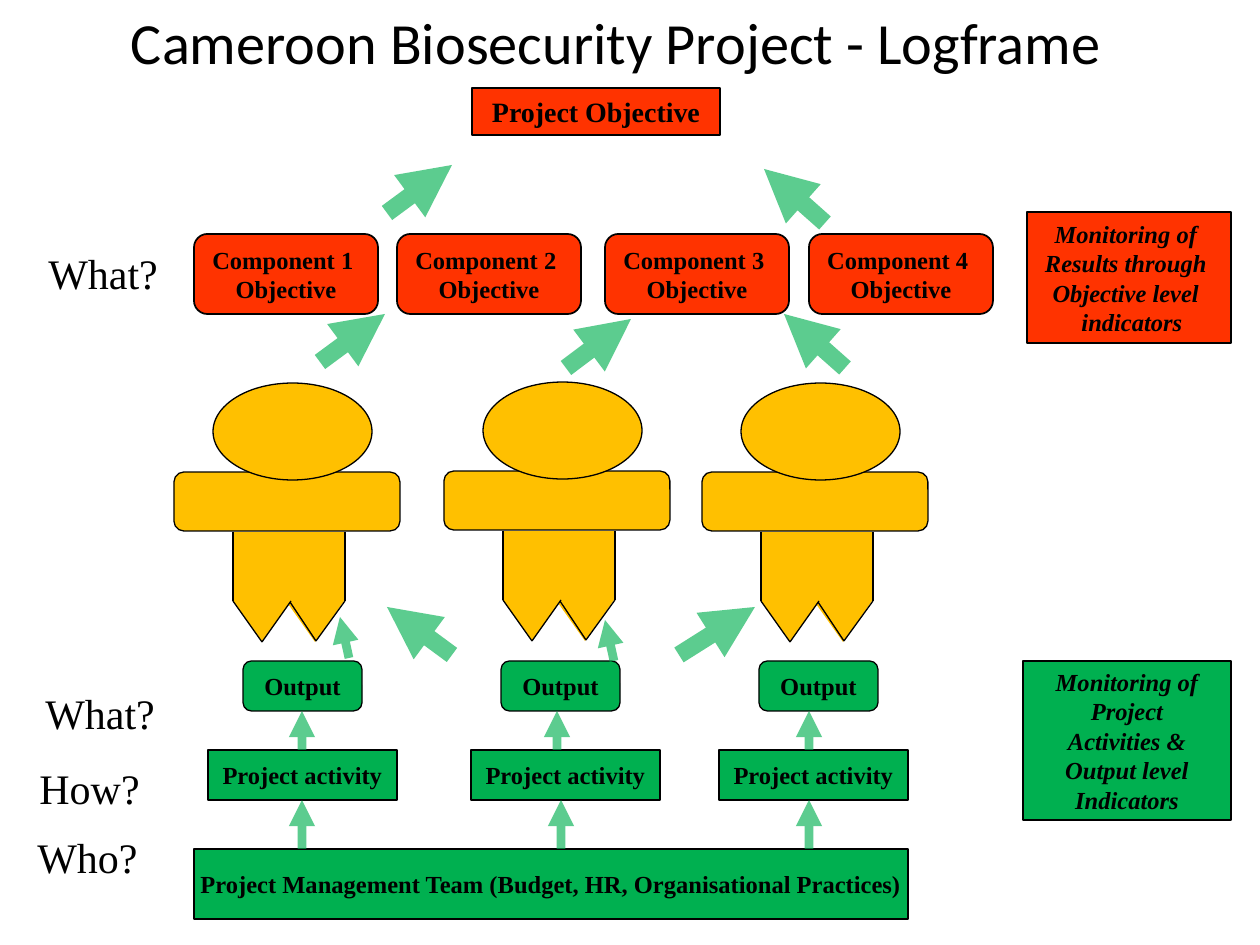
import pptx
import pptx.util
import pptx.dml.color
import pptx.enum.shapes
import pptx.enum.text
import pptx.oxml.ns
import lxml.etree

RGB = pptx.dml.color.RGBColor
SHAPE = pptx.enum.shapes.MSO_SHAPE
ALIGN = pptx.enum.text.PP_ALIGN
ANCHOR = pptx.enum.text.MSO_ANCHOR

RED = RGB(0xFF, 0x33, 0x00)
GREEN = RGB(0x00, 0xB0, 0x50)
AMBER = RGB(0xFF, 0xC0, 0x00)
BLACK = RGB(0, 0, 0)
SERIF = "Times New Roman"

# Content; all lengths in px
TITLE = "Cameroon Biosecurity Project - Logframe"
COMPONENTS = [(194, 1), (397, 2), (605, 3), (809, 4)]
OUTPUT_LEFTS = [243, 501, 759]
ACTIVITY_LEFTS = [208, 471, 719]
QUESTIONS = [("What?", 36, 241), ("What?", 33, 681),
             ("How?", 27, 756), ("Who?", 25, 825)]
RESULTS_MONITORING = ["Monitoring of ", "Results through ",
                      "Objective level ", " indicators"]
ACTIVITY_MONITORING = ["Monitoring of", "Project", "Activities &",
                       "Output level", "Indicators"]
TEAM = "Project Management Team (Budget, HR, Organisational Practices)"

# Arrows: start x, start y, end x, end y
WIDE_ARROWS = [
    (825, 223, 764, 169), (387, 213, 452, 165),   # components to objective
    (320, 362, 385, 314), (566, 368, 631, 319), (845, 368, 784, 314),
    (452, 655, 387, 607), (679, 655, 755, 607),   # outputs to people
]
NARROW_ARROWS = (
    [(x, 750, x, 711) for x in (302, 557, 809)]
    + [(x, 849, x, 800) for x in (302, 561, 809)]
    + [(614, 661, 605, 620), (349, 658, 340, 617)])

# One person, relative to its top left corner
PEOPLE = [(174, 383), (444, 382), (702, 383)]
TORSO, ARMS, HEAD = (59, 149, 112, 69), (0, 89, 226, 59), (39, 0, 159, 97)
LEGS = [(112, 218, 58, 41), (59, 218, 58, 41)]
BODY_EDGES = [(59, 149, 59, 218), (171, 149, 171, 218),
              (59, 218, 88, 259), (116, 219, 142, 258),
              (88, 259, 117, 218), (142, 258, 171, 218)]


def px(*lengths):
    return [round(n * 914400 / 126) for n in lengths]


def write(shape, lines, align, **font):
    """Put one paragraph per line into a shape or placeholder."""
    frame = shape.text_frame
    frame.text = "\n".join(lines)
    for paragraph in frame.paragraphs:
        paragraph.alignment = align
        paragraph.font.color.rgb = BLACK
        for key, value in font.items():
            setattr(paragraph.font, key, value)
    return frame


def add_block(parent, kind, box, fill, weight=0.75):
    block = parent.add_shape(kind, *px(*box))
    block.shadow.inherit = False
    block.fill.solid()
    block.fill.fore_color.rgb = fill
    if weight:
        block.line.color.rgb = BLACK
        block.line.width = pptx.util.Pt(weight)
    else:
        block.line.fill.background()
    return block


def add_box(kind, box, fill, lines, weight=0.75, size=14, italic=False):
    block = add_block(shapes, kind, box, fill, weight)
    frame = write(block, lines, ALIGN.CENTER, name=SERIF, bold=True,
                  size=pptx.util.Pt(size), italic=italic)
    frame.word_wrap = False
    frame.vertical_anchor = ANCHOR.MIDDLE


def add_line(parent, ends, color, weight):
    line = parent.add_connector(
        pptx.enum.shapes.MSO_CONNECTOR.STRAIGHT, *px(*ends))
    line.line.color.rgb = color
    line.line.width = pptx.util.Pt(weight)
    properties = line._element.spPr
    lxml.etree.SubElement(properties, pptx.oxml.ns.qn("a:effectLst"))
    return line


def add_arrow(ends, weight):
    outline = add_line(shapes, ends, GREEN, weight).line._get_or_add_ln()
    color = outline.find(".//" + pptx.oxml.ns.qn("a:srgbClr"))
    lxml.etree.SubElement(color, pptx.oxml.ns.qn("a:alpha"), val="63000")
    lxml.etree.SubElement(outline, pptx.oxml.ns.qn("a:tailEnd"),
                          type="triangle")


def add_person(left, top):
    def place(box):
        return (left + box[0], top + box[1], *box[2:])

    person = shapes.add_group_shape().shapes
    add_block(person, SHAPE.RECTANGLE, place(TORSO), AMBER, 0)
    add_block(person, SHAPE.ROUNDED_RECTANGLE, place(ARMS), AMBER)
    for leg in LEGS:
        add_block(person, SHAPE.ISOSCELES_TRIANGLE, place(leg),
                  AMBER, 0).rotation = 180
    for x1, y1, x2, y2 in BODY_EDGES:
        add_line(person, (left + x1, top + y1, left + x2, top + y2),
                 BLACK, 0.75)
    add_block(person, SHAPE.OVAL, place(HEAD), AMBER)


deck = pptx.Presentation()
deck.slide_width, deck.slide_height = px(1260, 945)
slide = deck.slides.add_slide(deck.slide_layouts[5])
shapes = slide.shapes

# Title
title = shapes.title
title.left, title.top, title.width, title.height = px(101, -4, 1031, 91)
write(title, [TITLE], ALIGN.CENTER, name="Calibri",
      size=pptx.util.Pt(33.3)).vertical_anchor = ANCHOR.MIDDLE

# Objectives
add_box(SHAPE.RECTANGLE, (472, 88, 248, 47), RED, ["Project Objective"], 1, 16)
for left, number in COMPONENTS:
    add_box(SHAPE.ROUNDED_RECTANGLE, (left, 234, 184, 80), RED,
            [f"Component {number} ", "Objective"], 1)

# Outputs, activities and team
for left in OUTPUT_LEFTS:
    add_box(SHAPE.ROUNDED_RECTANGLE, (left, 661, 119, 50), GREEN, ["Output"])
for left in ACTIVITY_LEFTS:
    add_box(SHAPE.RECTANGLE, (left, 750, 189, 50), GREEN, ["Project activity"])
add_box(SHAPE.RECTANGLE, (194, 849, 714, 70), GREEN, [TEAM])

# Monitoring notes
add_box(SHAPE.RECTANGLE, (1027, 212, 204, 131), RED, RESULTS_MONITORING, 1,
        italic=True)
add_box(SHAPE.RECTANGLE, (1023, 661, 208, 159), GREEN, ACTIVITY_MONITORING,
        italic=True)

# Questions down the left side
for question, left, top in QUESTIONS:
    label = shapes.add_textbox(*px(left, top, 136, 63))
    write(label, [question], ALIGN.LEFT, name=SERIF,
          size=pptx.util.Pt(24)).word_wrap = False

# People and arrows
for corner in PEOPLE:
    add_person(*corner)
for arrows, arrow_weight in ((WIDE_ARROWS, 10), (NARROW_ARROWS, 5)):
    for arrow_ends in arrows:
        add_arrow(arrow_ends, arrow_weight)

deck.save("out.pptx")
